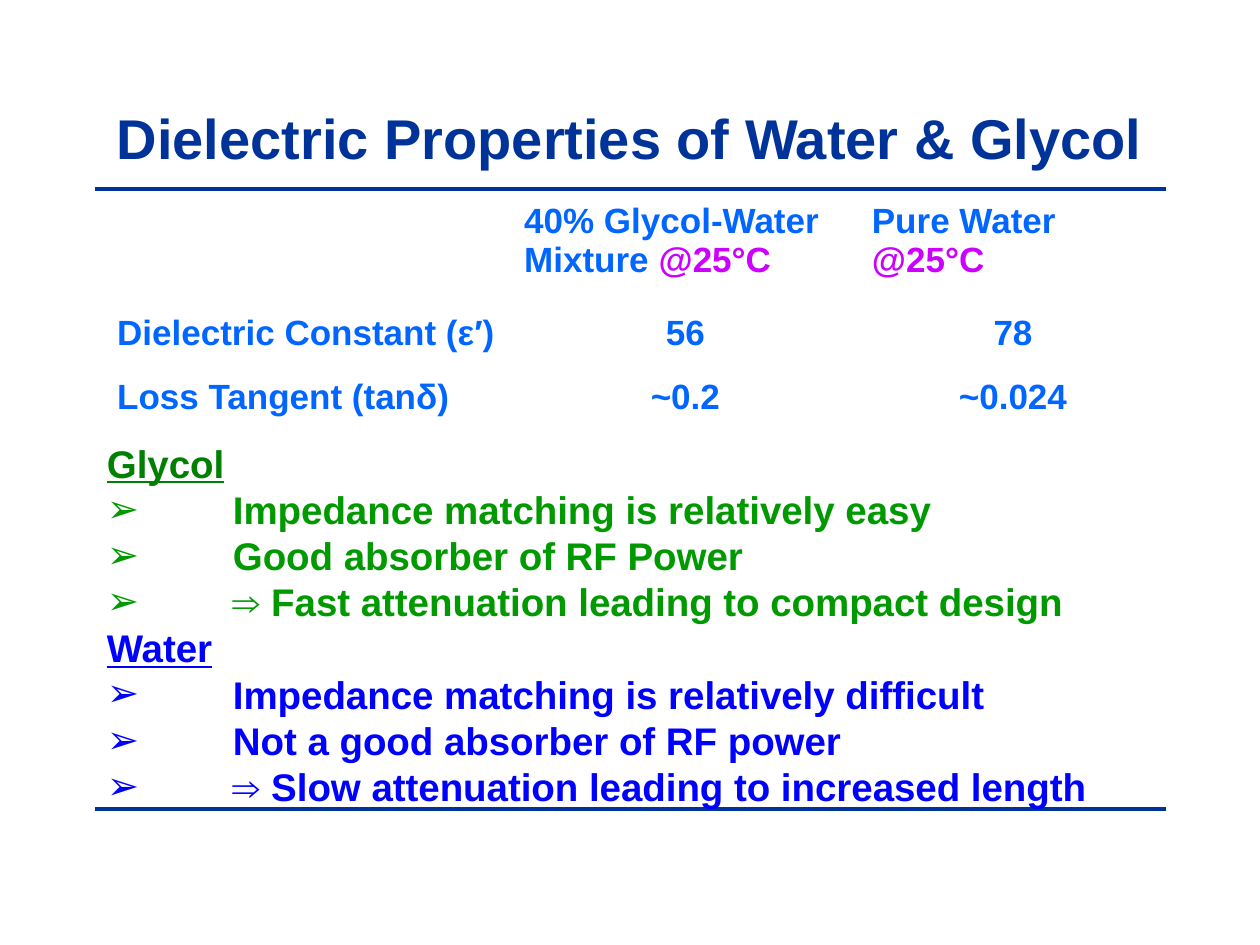
from lxml.etree import SubElement
from pptx import Presentation
from pptx.dml.color import RGBColor
from pptx.enum.shapes import MSO_CONNECTOR
from pptx.enum.text import MSO_ANCHOR, PP_ALIGN
from pptx.oxml.ns import qn
from pptx.util import Inches, Pt

NAVY, BLUE, MAGENTA = "003399", "0066FF", "CC00FF"


def color(value):
    return RGBColor.from_string(value)


def add_span(para, text, size, value, underline=False):
    span = para.add_run()
    span.text = text
    span.font.name = "Arial"
    span.font.size = Pt(size)
    span.font.bold = True
    span.font.underline = underline
    span.font.color.rgb = color(value)


deck = Presentation()
deck.slide_width = Inches(10)
deck.slide_height = Inches(7.5)
page = deck.slides.add_slide(deck.slide_layouts[6])

for top in (1.5, 6.42):
    rule = page.shapes.add_connector(
        MSO_CONNECTOR.STRAIGHT, Inches(0.75), Inches(top), Inches(9.25), Inches(top))
    rule.line.color.rgb = color(NAVY)
    rule.line.width = Pt(2)
    SubElement(rule._element.spPr, qn("a:effectLst"))

title = page.shapes.add_textbox(Inches(0.75), Inches(0.67), Inches(8.5), Inches(0.83))
title.text_frame.word_wrap = True
title.text_frame.vertical_anchor = MSO_ANCHOR.MIDDLE
para = title.text_frame.paragraphs[0]
para.alignment = PP_ALIGN.CENTER
add_span(para, "Dielectric Properties of Water & Glycol", 32, NAVY)

rows = [
    ["", "40% Glycol-Water Mixture ", "Pure Water "],
    ["Dielectric Constant (ε′)", "56", "78"],
    ["Loss Tangent (tanδ)", "~0.2", "~0.024"],
]
table = page.shapes.add_table(
    3, 3, Inches(0.83), Inches(1.55), Inches(8.43), Inches(1.91)).table
table.first_row = False
table.horz_banding = False
for column, width in zip(table.columns, (3.23, 2.76, 2.44)):
    column.width = Inches(width)
for row, height in zip(table.rows, (0.89, 0.51, 0.51)):
    row.height = Inches(height)
for row_index, texts in enumerate(rows):
    for column_index, text in enumerate(texts):
        cell = table.cell(row_index, column_index)
        cell.fill.background()
        if not text:
            continue
        para = cell.text_frame.paragraphs[0]
        add_span(para, text, 20, BLUE)
        if row_index == 0:
            add_span(para, "@25°C", 20, MAGENTA)
        elif column_index > 0:
            para.alignment = PP_ALIGN.CENTER

liquids = [
    ("Glycol", "008000", "009900", [
        "Impedance matching is relatively easy",
        "Good absorber of RF Power",
        "⇒ Fast attenuation leading to compact design",
    ]),
    ("Water", "0000FF", "0000FF", [
        "Impedance matching is relatively difficult",
        "Not a good absorber of RF power",
        "⇒ Slow attenuation leading to increased length",
    ]),
]
box = page.shapes.add_textbox(Inches(0.75), Inches(3.44), Inches(8.58), Inches(3.06))
box.text_frame.word_wrap = True
para = box.text_frame.paragraphs[0]
for heading, heading_color, point_color, points in liquids:
    if para.runs:
        para = box.text_frame.add_paragraph()
    add_span(para, heading, 22, heading_color, True)
    for point in points:
        para = box.text_frame.add_paragraph()
        properties = para._p.get_or_add_pPr()
        properties.set("marL", str(Inches(1)))
        properties.set("indent", str(-Inches(1)))
        SubElement(properties, qn("a:buFont"), typeface="Arial")
        SubElement(properties, qn("a:buChar"), char="➢")
        add_span(para, point, 22, point_color)

deck.save("out.pptx")
